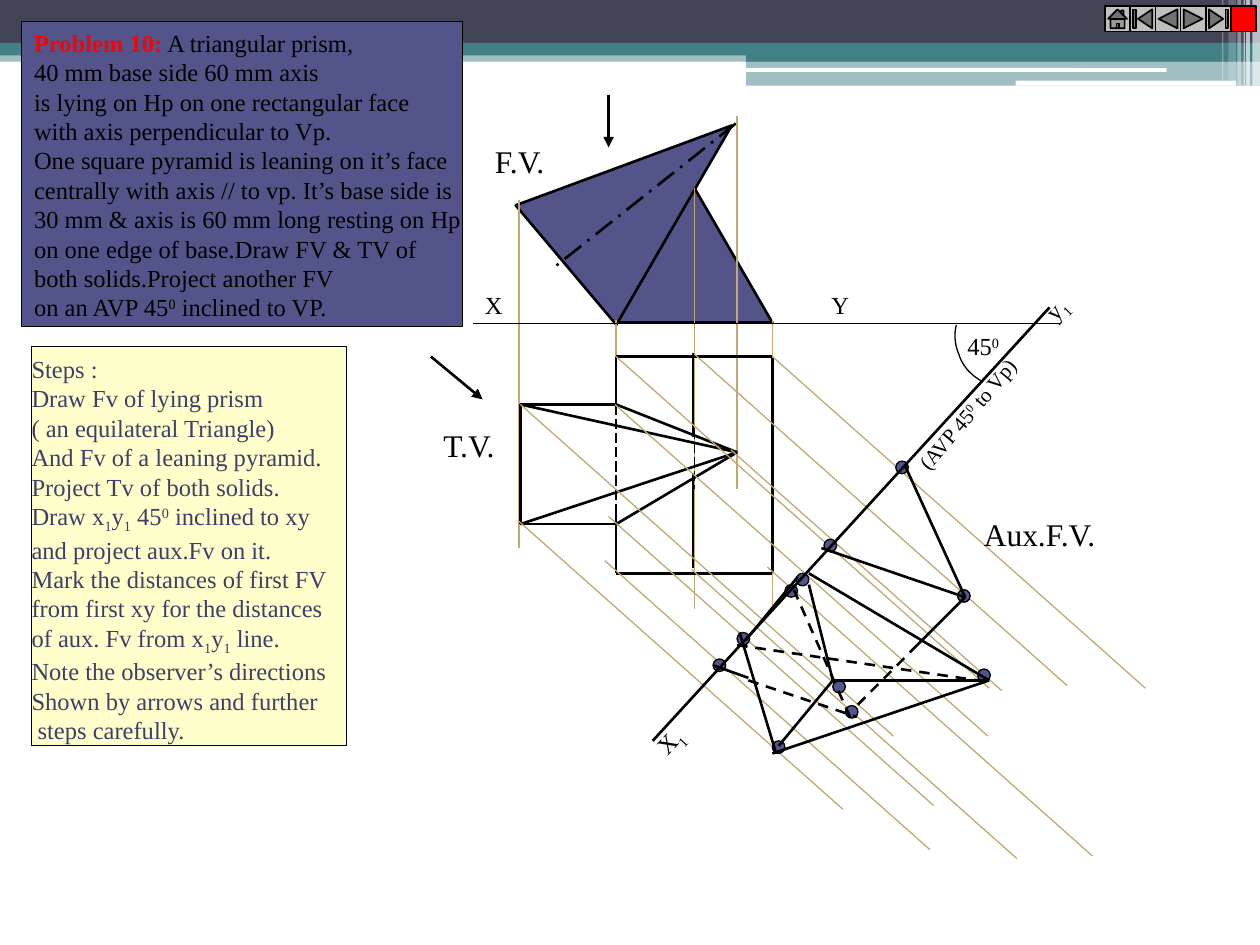
from lxml.etree import SubElement
from pptx import Presentation
from pptx.dml.color import RGBColor
from pptx.enum.dml import MSO_LINE
from pptx.enum.shapes import MSO_CONNECTOR, MSO_SHAPE
from pptx.enum.text import MSO_ANCHOR, MSO_AUTO_SIZE, PP_ALIGN
from pptx.oxml.ns import qn
from pptx.util import Inches, Pt

BLACK, WHITE, TEAL, INDIGO, TAN = "000000", "FFFFFF", "438086", "53548A", "C2A874"
THICK, THIN = 1.5, 0.75
RAY_SLOPE = 0.889


def color(value):
    return RGBColor.from_string(value)


class Drawing:
    font = "Times New Roman"

    def __init__(self, slide):
        self.slide = slide

    def shape(self, kind, left, top, width, height, fill, line=None, alpha=None, rotation=0):
        shape = self.slide.shapes.add_shape(
            kind, Inches(left), Inches(top), Inches(width), Inches(height))
        shape.shadow.inherit = False
        shape.rotation = rotation
        shape.fill.solid()
        shape.fill.fore_color.rgb = color(fill)
        if alpha:
            value = shape._element.spPr.find(qn("a:solidFill")).find(qn("a:srgbClr"))
            SubElement(value, qn("a:alpha"), val=str(alpha * 1000))
        if line:
            shape.line.color.rgb = color(BLACK)
            shape.line.width = Pt(line)
        else:
            shape.line.fill.background()

    def line(self, x1, y1, x2, y2, width=THICK, stroke=BLACK, dash=None, arrow=False):
        connector = self.slide.shapes.add_connector(
            MSO_CONNECTOR.STRAIGHT, Inches(x1), Inches(y1), Inches(x2), Inches(y2))
        connector.line.color.rgb = color(stroke)
        connector.line.width = Pt(width)
        if dash:
            connector.line.dash_style = dash
        properties = connector._element.spPr
        if arrow:
            SubElement(properties.find(qn("a:ln")), qn("a:tailEnd"), type="triangle")
        SubElement(properties, qn("a:effectLst"))

    def ray(self, x, y, run):
        self.line(x, y, x + run, y + run * RAY_SLOPE, THIN, TAN)

    def dot(self, left, top):
        self.shape(MSO_SHAPE.OVAL, left, top, 0.1, 0.1, INDIGO, THIN)

    def curve(self, start, segments):
        builder = self.slide.shapes.build_freeform(
            Inches(start[0]), Inches(start[1]), scale=1.0)
        points = []
        for segment in segments:
            corners = [start, *segment]
            for step in range(1, 13):
                t = step / 12
                weights = ((1 - t) ** 3, 3 * t * (1 - t) ** 2, 3 * t * t * (1 - t), t ** 3)
                points.append(tuple(
                    Inches(sum(w * corner[axis] for w, corner in zip(weights, corners)))
                    for axis in (0, 1)))
            start = segment[-1]
        builder.add_line_segments(points, close=False)
        shape = builder.convert_to_shape()
        shape.shadow.inherit = False
        shape.fill.background()
        shape.line.color.rgb = color(BLACK)
        shape.line.width = Pt(THIN)

    def fill_text(self, shape, paragraphs, size, ink=BLACK, wrap=False, before=0):
        frame = shape.text_frame
        frame.word_wrap = wrap
        frame.auto_size = MSO_AUTO_SIZE.SHAPE_TO_FIT_TEXT
        frame.vertical_anchor = MSO_ANCHOR.TOP
        for index, runs in enumerate(paragraphs):
            paragraph = frame.add_paragraph() if index else frame.paragraphs[0]
            paragraph.alignment = PP_ALIGN.LEFT
            paragraph.space_before = Pt(before)
            properties = paragraph._p.get_or_add_pPr()
            properties.set("marL", "0")
            properties.set("indent", "0")
            SubElement(properties, qn("a:buNone"))
            for text, baseline in runs:
                run = paragraph.add_run()
                run.text = text
                run.font.name = self.font
                run.font.size = Pt(size)
                run.font.color.rgb = color(ink)
                if baseline:
                    run._r.get_or_add_rPr().set("baseline", str(baseline * 1000))

    def label(self, left, top, width, height, runs, size, rotation=0, **options):
        shape = self.slide.shapes.add_textbox(
            Inches(left), Inches(top), Inches(width), Inches(height))
        shape.rotation = rotation
        self.fill_text(shape, [runs], size, **options)

    def placeholder(self, shape, left, top, width, height, paragraphs, ink):
        shape.left, shape.top = Inches(left), Inches(top)
        shape.width, shape.height = Inches(width), Inches(height)
        self.fill_text(shape, paragraphs, 14, ink)
        self.slide.shapes._spTree.append(shape._element)


def plain(*lines):
    return [[(line, 0)] for line in lines]


def draw_theme(drawing):
    for left, top, width, height, fill, alpha in (
            (0, 0.4, 10, 0.09, TEAL, 50), (0, 0, 10, 0.34, "424456", None),
            (0, 0.34, 10, 0.1, TEAL, None), (5.92, 0.39, 4.08, 0.1, TEAL, None),
            (5.92, 0.48, 4.08, 0.2, TEAL, 50)):
        drawing.shape(MSO_SHAPE.RECTANGLE, left, top, width, height, fill, alpha=alpha)
    for left, top, width, height in ((5.91, 0.54, 3.35, 0.03), (8.06, 0.64, 1.75, 0.04)):
        drawing.shape(MSO_SHAPE.ROUNDED_RECTANGLE, left, top, width, height, WHITE)
    for left, width, height, alpha in (
            (9.94, 0.06, 0.68, 65), (9.89, 0.03, 0.68, 65), (9.87, 0.01, 0.68, 60),
            (9.82, 0.03, 0.68, 40), (9.75, 0.06, 0.64, 20), (9.7, 0.01, 0.64, 30)):
        drawing.shape(MSO_SHAPE.RECTANGLE, left, 0, width, height, WHITE, alpha=alpha)


def draw_front_view(drawing):
    triangle = MSO_SHAPE.ISOSCELES_TRIANGLE
    drawing.shape(triangle, 4.89, 1.49, 1.24, 1.07, INDIGO, THICK)
    drawing.shape(triangle, 4.53, 0.69, 1.24, 1.72, INDIGO, THICK, rotation=49.9)
    drawing.line(5.84, 0.98, 4.4, 2.12, dash=MSO_LINE.LONG_DASH_DOT)
    for x, top, bottom in ((4.12, 1.59, 4.35), (4.89, 2.54, 3.21), (5.85, 0.92, 3.88),
                           (6.13, 2.54, 4.83), (5.51, 1.49, 4.83)):
        drawing.line(x, top, x, bottom, THIN, TAN)


def draw_top_view(drawing):
    for corner in ((4.13, 4.16), (4.13, 3.21), (4.89, 4.16), (4.89, 3.21)):
        drawing.line(5.85, 3.59, *corner)
    for ends in ((4.13, 3.21, 4.89, 3.21), (4.13, 4.16, 4.89, 4.16), (4.13, 3.21, 4.13, 4.16),
                 (4.89, 2.83, 6.13, 2.83), (4.89, 4.55, 6.13, 4.55), (5.5, 2.8, 5.5, 3.47),
                 (5.5, 3.75, 5.5, 4.51), (6.13, 2.83, 6.13, 4.55), (4.89, 2.83, 4.89, 3.21)):
        drawing.line(*ends)
    drawing.line(4.89, 4.07, 4.89, 4.55, THIN)
    for x, top, bottom in ((4.89, 3.21, 4.16), (5.51, 3.4, 3.88)):
        drawing.line(x, top, x, bottom, THIN, dash=MSO_LINE.LONG_DASH)


def draw_auxiliary_view(drawing):
    for x, y, run in ((4.11, 4.13, 2.58), (4.83, 4.1, 2.58), (4.13, 3.21, 2.96),
                      (4.88, 3.21, 2.96), (5.8, 3.57, 2.15), (5.51, 2.81, 2.96),
                      (6.13, 2.83, 2.96), (4.89, 2.83, 2.96), (4.8, 4.45, 2.58),
                      (5.49, 4.52, 2.58), (6.09, 4.5, 2.58)):
        drawing.ray(x, y, run)
    for left, top in ((5.85, 5.02), (6.32, 4.55), (6.13, 5.88), (6.61, 5.4), (7.76, 5.31),
                      (7.11, 3.66), (6.54, 4.28), (6.23, 4.64), (5.66, 5.23), (6.71, 5.6),
                      (7.6, 4.68)):
        drawing.dot(left, top)
    for ends in ((6.61, 5.4, 7.85, 5.4), (6.42, 4.64, 6.61, 5.4), (6.61, 5.4, 6.18, 5.92),
                 (6.52, 4.35, 7.66, 4.74), (8.33, 2.44, 5.18, 5.88), (7.18, 3.69, 7.66, 4.74),
                 (7.66, 4.74, 7.28, 5.12), (5.66, 5.28, 5.94, 5.38), (5.87, 5.02, 6.16, 5.98),
                 (6.13, 5.98, 7.85, 5.4), (6.42, 4.55, 7.85, 5.4), (6.33, 4.58, 5.92, 5.08)):
        drawing.line(*ends)
    for ends in ((5.85, 5.12, 7.76, 5.4), (6.3, 4.68, 6.75, 5.7),
                 (5.94, 5.4, 6.8, 5.69), (7.28, 5.12, 6.8, 5.6)):
        drawing.line(*ends, dash=MSO_LINE.DASH)


def draw_annotations(drawing):
    drawing.line(3.75, 2.57, 8.42, 2.57, THIN)
    drawing.line(4.83, 0.75, 4.83, 1.17, arrow=True)
    drawing.line(3.42, 2.83, 3.83, 3.17, arrow=True)
    drawing.curve((7.8, 3.03), [((7.71, 2.98), (7.64, 2.91), (7.61, 2.81)),
                                ((7.58, 2.74), (7.57, 2.66), (7.59, 2.58))])
    drawing.label(7.58, 2.58, 0.46, 0.33, [("45", 0), ("0", 30)], 14)
    drawing.label(6.96, 2.98, 1.7, 0.3, [("(AVP 45", 0), ("0", 30), (" to Vp)", 0)], 12,
                  rotation=310.3, wrap=True, before=6)
    drawing.label(8.2, 2.28, 0.36, 0.33, [("y", 0), ("1", -25)], 14, rotation=314.7)
    drawing.label(5.11, 5.71, 0.41, 0.33, [("X", 0), ("1", -25)], 14, rotation=313.1)
    for left, top, width, height, text, size in (
            (3.83, 1.08, 0.65, 0.4, "F.V.", 18), (3.42, 3.33, 0.66, 0.4, "T.V.", 18),
            (7.71, 4.04, 1.14, 0.4, "Aux.F.V.", 18), (3.75, 2.25, 0.34, 0.33, "X", 14),
            (6.5, 2.25, 0.34, 0.33, "Y", 14)):
        drawing.label(left, top, width, height, [(text, 0)], size)


def fill_panels(drawing):
    title, body = drawing.slide.shapes.title, drawing.slide.placeholders[1]
    drawing.shape(MSO_SHAPE.RECTANGLE, 0.17, 0.17, 3.5, 2.42, INDIGO, THIN)
    drawing.placeholder(title, 0.17, 0.17, 3.63, 2.43, [
        [("Problem 10:", 0), (" A triangular prism,", 0)],
        *plain("40 mm base side 60 mm axis", "is lying on Hp on one rectangular face",
               "with axis perpendicular to Vp.", "One square pyramid is leaning on it’s face",
               "centrally with axis // to vp. It’s base side is",
               "30 mm & axis is 60 mm long resting on Hp",
               "on one edge of base.Draw FV & TV of", "both solids.Project another FV"),
        [("on an AVP 45", 0), ("0", 30), (" inclined to VP.", 0)]], BLACK)
    heading = title.text_frame.paragraphs[0].runs[0].font
    heading.bold = True
    heading.color.rgb = color("FF0000")
    drawing.shape(MSO_SHAPE.RECTANGLE, 0.25, 2.75, 2.5, 3.17, "FFFFCC", THIN)
    reference = [("1", -25), ("y", 0), ("1", -25)]
    drawing.placeholder(body, 0.15, 2.76, 2.61, 3.16, [
        *plain("Steps :", "Draw Fv of lying prism", "( an equilateral Triangle)",
               "And Fv of a leaning pyramid.", "Project Tv of both solids."),
        [("Draw x", 0), *reference, (" 45", 0), ("0", 30), (" inclined to xy", 0)],
        *plain("and project aux.Fv on it.", "Mark the distances of first FV",
               "from first xy for the distances"),
        [("of aux. Fv from x", 0), *reference, (" line.", 0)],
        *plain("Note the observer’s directions", "Shown by arrows and further",
               " steps carefully.")], "3E3F68")


def draw_navigation(drawing):
    names = ("HOME", "BEGINNING", "BACK_OR_PREVIOUS", "FORWARD_OR_NEXT", "END", "CUSTOM")
    for index, name in enumerate(names):
        fill = "FF0000" if name == "CUSTOM" else "C0C0C0"
        drawing.shape(MSO_SHAPE["ACTION_BUTTON_" + name], 8.77 + 0.2 * index, 0.05,
                      0.2, 0.2, fill, 1)


def main():
    presentation = Presentation()
    presentation.slide_width, presentation.slide_height = Inches(10), Inches(7.5)
    drawing = Drawing(presentation.slides.add_slide(presentation.slide_layouts[1]))
    for draw in (draw_theme, draw_front_view, draw_top_view, draw_auxiliary_view,
                 draw_annotations, fill_panels, draw_navigation):
        draw(drawing)
    presentation.save("out.pptx")


if __name__ == "__main__":
    main()
